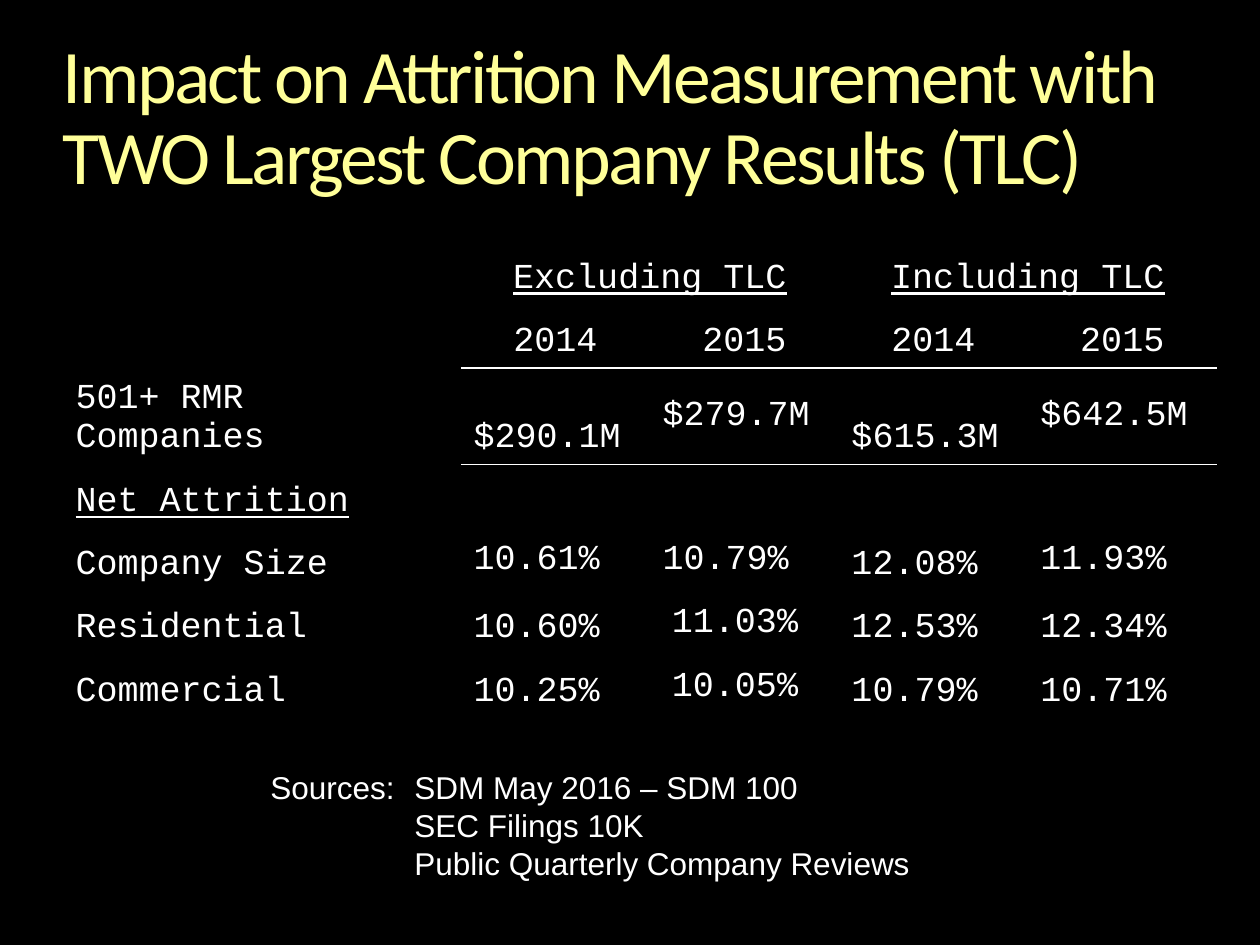
from lxml.etree import SubElement
from pptx import Presentation
from pptx.dml.color import RGBColor
from pptx.enum.text import MSO_ANCHOR, PP_ALIGN
from pptx.oxml import parse_xml
from pptx.oxml.ns import nsdecls, qn
from pptx.util import Pt

PX = 914400 // 126
COLORS = {"background": "000000", "title": "FFFF99", "text": "FFFFFF"}
NO_STYLE = "{2D5ABB26-0587-4C30-8999-92F81FD0307C}"


def set_font(paragraph, name, size, color):
    font = paragraph.font
    font.name, font.size = name, Pt(size)
    font.color.rgb = RGBColor.from_string(COLORS[color])


def add_border(cell, side):
    cell._tc.get_or_add_tcPr().insert(0, parse_xml(
        f'<a:{side} {nsdecls("a")} w="12700"><a:solidFill>'
        f'<a:srgbClr val="{COLORS["text"]}"/></a:solidFill></a:{side}>'))


presentation = Presentation()
presentation.slide_width = 1260 * PX
presentation.slide_height = 945 * PX
slide = presentation.slides.add_slide(presentation.slide_layouts[6])
slide.background.fill.solid()
slide.background.fill.fore_color.rgb = RGBColor.from_string(COLORS["background"])

# Title
title = slide.shapes.add_textbox(63 * PX, 38 * PX, 1134 * PX, 157 * PX)
frame = title.text_frame
frame.word_wrap = True
frame.margin_left = frame.margin_right = frame.margin_top = frame.margin_bottom = 0
paragraph = frame.paragraphs[0]
run = paragraph.add_run()
run.text = "Impact on Attrition Measurement with TWO Largest Company Results (TLC)"
run._r.get_or_add_rPr().set("spc", "-150")
paragraph.line_spacing = 0.9
set_font(paragraph, "Calibri", 43.2, "title")

# Attrition table
rows = [
    ["", "Excluding TLC", "", "Including TLC", ""],
    ["", "2014", "2015", "2014", "2015"],
    ["501+ RMR Companies", "$290.1M", "$279.7M", "$615.3M", "$642.5M"],
    ["Net Attrition", "", "", "", ""],
    ["Company Size", "10.61%", "10.79%", "12.08%", "11.93%"],
    ["Residential", "10.60%", "11.03%", "12.53%", "12.34%"],
    ["Commercial", "10.25%", "10.05%", "10.79%", "10.71%"],
]
column_widths = [398, 189, 189, 189, 189]
row_heights = [84, 63, 63, 64, 63, 63, 64]
middle_cells = {(2, 2), (2, 4), (4, 1), (4, 2), (4, 4), (5, 2), (6, 2)}
indented_cells = {(5, 2), (6, 2)}
underlined = {"Excluding TLC", "Including TLC", "Net Attrition"}

table = slide.shapes.add_table(
    len(rows), len(column_widths), 63 * PX, 221 * PX,
    sum(column_widths) * PX, sum(row_heights) * PX).table
table.first_row = table.horz_banding = False
table._tbl.tblPr.find(qn("a:tableStyleId")).text = NO_STYLE
for column, width in zip(table.columns, column_widths):
    column.width = width * PX
for row, height in zip(table.rows, row_heights):
    row.height = height * PX
for first in (1, 3):
    table.cell(0, first).merge(table.cell(0, first + 1))

for row_index, row in enumerate(rows):
    for column_index, text in enumerate(row):
        place = (row_index, column_index)
        cell = table.cell(*place)
        cell.fill.background()
        middle = place in middle_cells
        cell.vertical_anchor = MSO_ANCHOR.MIDDLE if middle else MSO_ANCHOR.BOTTOM
        if place in indented_cells:
            cell.margin_left = 22 * PX
            cell.margin_top = cell.margin_right = PX
            cell.margin_bottom = 0
        if column_index and row_index in (1, 2):
            add_border(cell, "a:lnB"[2:] if row_index == 1 else "lnT")
        if text:
            cell.text = text
            paragraph = cell.text_frame.paragraphs[0]
            if row_index < 2:
                paragraph.alignment = PP_ALIGN.CENTER
            set_font(paragraph, "Courier New", 20, "text")
            paragraph.font.underline = text in underlined

# Sources, with the list hanging after its label
sources = slide.shapes.add_textbox(258 * PX, 762 * PX, 910 * PX, 126 * PX)
frame = sources.text_frame
frame.word_wrap = True
lines = ["Sources:\tSDM May 2016 – SDM 100", "SEC Filings 10K",
         "Public Quarterly Company Reviews"]
frame.text = "\n".join(lines)
for index, paragraph in enumerate(frame.paragraphs):
    properties = paragraph._p.get_or_add_pPr()
    properties.set("marL", str(144 * PX))
    properties.set("indent", str(0 if index else -144 * PX))
    if index == 0:
        tabs = SubElement(properties, qn("a:tabLst"))
        SubElement(tabs, qn("a:tab"), pos=str(144 * PX), algn="l")
    set_font(paragraph, "Arial", 18, "text")

presentation.save("out.pptx")
